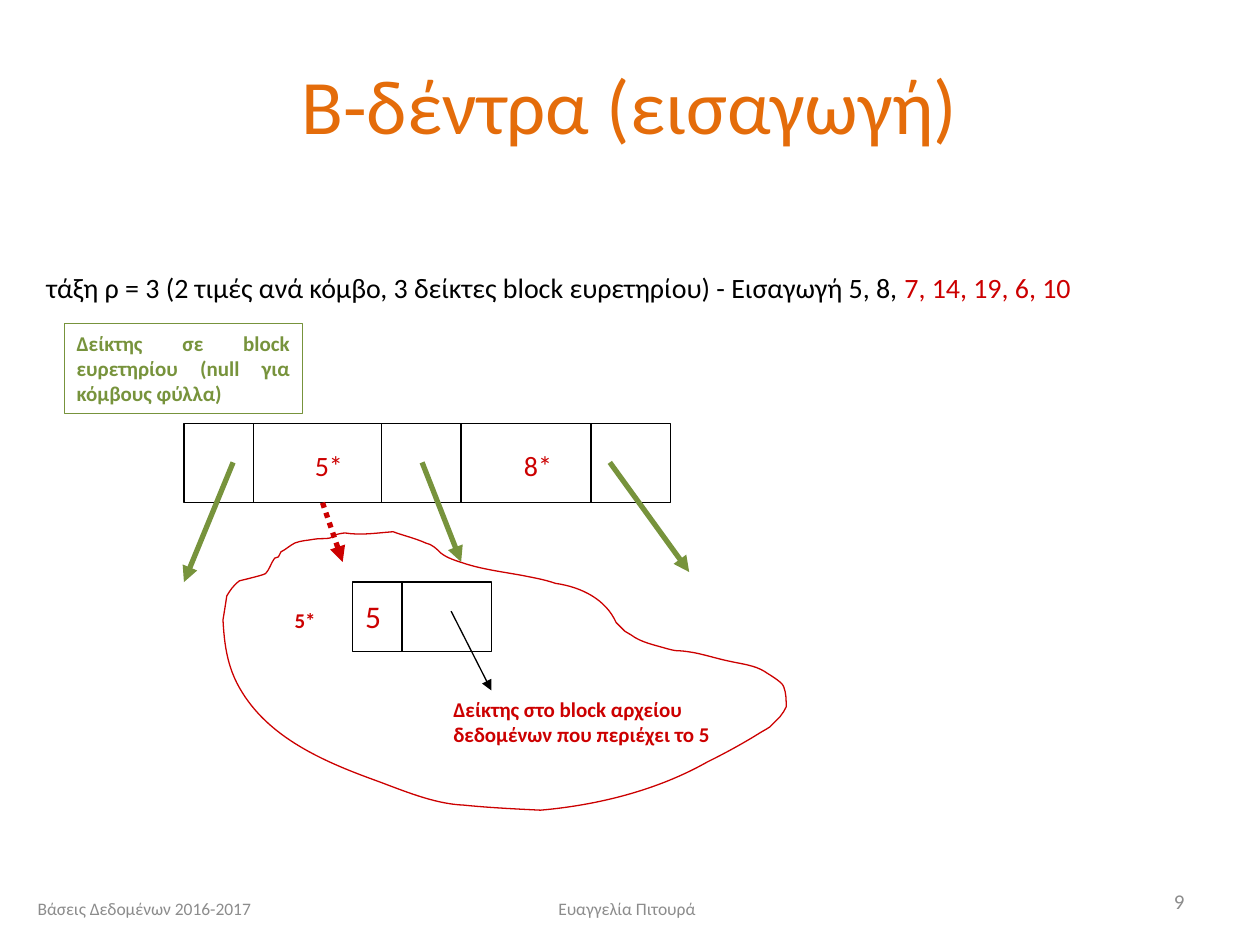
from dataclasses import dataclass
from typing import Optional

from lxml.etree import SubElement
from pptx import Presentation
from pptx.dml.color import RGBColor
from pptx.enum.dml import MSO_LINE
from pptx.enum.shapes import MSO_CONNECTOR, MSO_SHAPE
from pptx.enum.text import MSO_ANCHOR, PP_ALIGN
from pptx.oxml.ns import qn
from pptx.util import Emu, Pt

PX = 9144  # 100 px to the inch
BLACK, RED, GREEN, ORANGE, GRAY = "000000", "CC0000", "77933C", "E46C0A", "8C8C8C"
THIN, THICK = 0.75, 3


@dataclass
class Label:
    box: tuple[int, int, int, int]
    runs: list[tuple[str, str]]  # text, colour
    size: int
    bold: bool = False
    align: PP_ALIGN = PP_ALIGN.LEFT
    anchor: MSO_ANCHOR = MSO_ANCHOR.TOP
    border: Optional[str] = None


@dataclass
class Line:
    start: tuple[int, int]
    end: tuple[int, int]
    color: str = BLACK
    width: float = THIN
    arrow: bool = False
    dash: Optional[MSO_LINE] = None


@dataclass
class Node:
    """A box cut into cells by upright dividers."""
    box: tuple[int, int, int, int]
    dividers: list[int]


NODES = [
    Node((146, 336, 386, 63), [201, 303, 366, 469]),
    Node((280, 462, 110, 55), [319]),
]

ARROWS = [
    Line((185, 367), (146, 462), GREEN, THICK, True),
    Line((335, 367), (366, 446), GREEN, THICK, True),
    Line((484, 367), (547, 454), GREEN, THICK, True),
    Line((358, 485), (390, 548), arrow=True),
    Line((256, 399), (272, 446), RED, THICK, True, MSO_LINE.ROUND_DOT),
]

MIDDLE = MSO_ANCHOR.MIDDLE
LABELS = [
    Label((50, 20, 900, 125), [("Β-δέντρα (εισαγωγή)", ORANGE)], 44,
          align=PP_ALIGN.CENTER, anchor=MIDDLE),
    Label((27, 210, 929, 37),
          [("τάξη ρ = 3 (2 τιμές ανά κόμβο, 3 δείκτες block ευρετηρίου) - Εισαγωγή 5, 8, ", BLACK),
           ("7, 14, 19, 6, 10", RED)], 16, align=PP_ALIGN.JUSTIFY),
    Label((51, 257, 189, 71),
          [("Δείκτης σε block ευρετηρίου (null για κόμβους φύλλα)", GREEN)], 12,
          bold=True, align=PP_ALIGN.JUSTIFY, border=GREEN),
    Label((240, 351, 79, 37), [("5*", RED)], 16),
    Label((406, 351, 55, 37), [("8*", RED)], 16),
    Label((224, 477, 197, 30), [("5*", RED)], 12, bold=True),
    Label((280, 469, 31, 40), [("5", RED)], 18),
    Label((350, 548, 260, 50),
          [("Δείκτης στο block αρχείου δεδομένων που περιέχει το 5", RED)], 12, bold=True),
    Label((20, 701, 233, 40), [("Βάσεις Δεδομένων 2016-2017", GRAY)], 10, anchor=MIDDLE),
    Label((339, 701, 317, 40), [("Ευαγγελία Πιτουρά", GRAY)], 10,
          align=PP_ALIGN.CENTER, anchor=MIDDLE),
    Label((717, 695, 233, 40), [("9", GRAY)], 12, align=PP_ALIGN.RIGHT, anchor=MIDDLE),
]

# Each row after the start: two control points and the end of one curve.
CLOUD_START = (274, 423)
CLOUD_CURVES = [
    (272, 423), (267, 424), (265, 425),
    (264, 425), (263, 427), (262, 427),
    (258, 428), (254, 427), (249, 428),
    (244, 429), (239, 429), (234, 431),
    (230, 433), (227, 436), (223, 438),
    (222, 439), (222, 441), (221, 442),
    (220, 443), (219, 443), (218, 443),
    (215, 447), (214, 452), (211, 455),
    (211, 456), (194, 460), (190, 461),
    (185, 465), (183, 468), (180, 473),
    (179, 480), (178, 486), (177, 492),
    (178, 510), (180, 526), (188, 542),
    (209, 583), (253, 603), (297, 619),
    (319, 627), (344, 638), (368, 639),
    (388, 641), (408, 642), (429, 643),
    (475, 639), (522, 627), (561, 605),
    (575, 598), (588, 591), (601, 583),
    (604, 581), (608, 579), (611, 577),
    (614, 574), (619, 569), (619, 569),
    (621, 566), (623, 564), (624, 561),
    (624, 556), (624, 550), (622, 545),
    (621, 541), (608, 534), (607, 533),
    (599, 528), (589, 527), (580, 525),
    (570, 523), (561, 520), (551, 518),
    (533, 515), (542, 518), (530, 515),
    (520, 512), (509, 510), (501, 504),
    (499, 503), (498, 502), (496, 501),
    (494, 499), (489, 494), (489, 494),
    (481, 476), (462, 466), (441, 463),
    (432, 460), (426, 459), (416, 457),
    (400, 454), (383, 452), (368, 447),
    (362, 445), (355, 443), (350, 439),
    (347, 436), (343, 432), (338, 431),
    (329, 427), (320, 425), (312, 422),
    (299, 423), (286, 425), (274, 423),
]


def rgb(color: str) -> RGBColor:
    return RGBColor.from_string(color)


def emu(*lengths: int) -> list[Emu]:
    return [Emu(length * PX) for length in lengths]


def outline(shape, color: str) -> None:
    """Leave the shape hollow, with a thin border and no shadow."""
    shape.shadow.inherit = False
    shape.fill.background()
    shape.line.color.rgb = rgb(color)
    shape.line.width = Pt(THIN)


def draw_line(slide, line: Line) -> None:
    connector = slide.shapes.add_connector(MSO_CONNECTOR.STRAIGHT, *emu(*line.start, *line.end))
    connector.line.color.rgb = rgb(line.color)
    connector.line.width = Pt(line.width)
    if line.dash:
        connector.line.dash_style = line.dash
    if line.arrow:
        SubElement(connector.line._get_or_add_ln(), qn("a:tailEnd"), type="triangle")
    SubElement(connector._element.spPr, qn("a:effectLst"))


def draw_node(slide, node: Node) -> None:
    left, top, width, height = node.box
    outline(slide.shapes.add_shape(MSO_SHAPE.RECTANGLE, *emu(*node.box)), BLACK)
    for x in node.dividers:
        draw_line(slide, Line((x, top), (x, top + height)))


def draw_label(slide, label: Label) -> None:
    if label.border:
        shape = slide.shapes.add_shape(MSO_SHAPE.RECTANGLE, *emu(*label.box))
        outline(shape, label.border)
    else:
        shape = slide.shapes.add_textbox(*emu(*label.box))
    frame = shape.text_frame
    frame.word_wrap = True
    frame.vertical_anchor = label.anchor
    paragraph = frame.paragraphs[0]
    paragraph.alignment = label.align
    for text, color in label.runs:
        run = paragraph.add_run()
        run.text = text
        run.font.name = "Calibri"
        run.font.size = Pt(label.size)
        run.font.bold = label.bold
        run.font.color.rgb = rgb(color)


def draw_cloud(slide) -> None:
    """Build the outline, then turn every three segments into one Bézier curve."""
    builder = slide.shapes.build_freeform(*CLOUD_START, scale=PX)
    builder.add_line_segments(CLOUD_CURVES, close=True)
    cloud = builder.convert_to_shape()
    outline(cloud, RED)
    segments = list(cloud._element.iter(qn("a:lnTo")))[:len(CLOUD_CURVES)]
    for first in range(0, len(segments), 3):
        group = segments[first:first + 3]
        curve = group[0].makeelement(qn("a:cubicBezTo"))
        group[0].addprevious(curve)
        for segment in group:
            curve.append(segment[0])
            segment.getparent().remove(segment)


def main() -> None:
    presentation = Presentation()
    presentation.slide_width, presentation.slide_height = emu(1000, 750)
    slide = presentation.slides.add_slide(presentation.slide_layouts[6])
    draw_cloud(slide)
    for node in NODES:
        draw_node(slide, node)
    for arrow in ARROWS:
        draw_line(slide, arrow)
    for label in LABELS:
        draw_label(slide, label)
    presentation.save("out.pptx")


if __name__ == "__main__":
    main()
